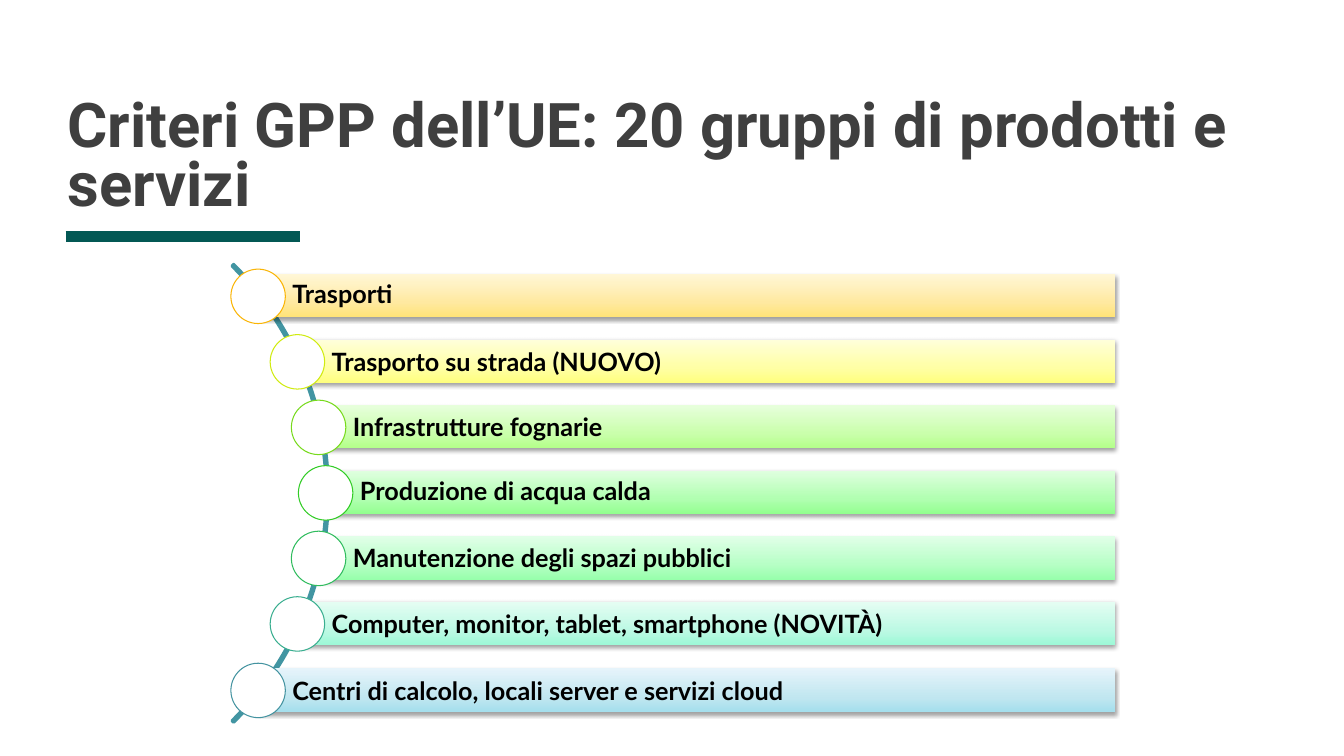
"""Build the slide on the EU green public procurement product groups."""
import math

import lxml.etree
import pptx
import pptx.dml.color
import pptx.enum.shapes
import pptx.enum.text
import pptx.oxml.ns
import pptx.util

PX = 9144
COLOURS = {
    "title": "3F3F3F",
    "rule": "035854",
    "arc": "4295A2",
    "text": "000000",
    "disc": "FFFFFF",
}
GROUPS = [
    ("Trasporti", 0.9, "FAB506", ("FFE376", "FFE9A1", "FFF7D7")),
    ("Trasporto su strada (NUOVO)", 1.0, "D0EB10", ("FFFF7E", "FFFFA5", "FFFFDA")),
    ("Infrastrutture fognarie", 1.0, "77DA1C", ("B3FF89", "CAFFAC", "E7FFDC")),
    ("Produzione di acqua calda", 0.9, "32CC26", ("92FF8F", "B1FFB1", "DFFFDF")),
    ("Manutenzione degli spazi pubblici", 1.0, "30BC5E", ("97FFAB", "B7FFC6", "E1FFE8")),
    ("Computer, monitor, tablet, smartphone (NOVITÀ)", 1.0, "39AE8F",
     ("9EF9D7", "BDF9E4", "E5FDF3")),
    ("Centri di calcolo, locali server e servizi cloud", 1.0, "4393A0",
     ("A6DFED", "C2E7F0", "E6F4FB")),
]
STOPS = (0, 35, 100)
FIRST_TOP, LAST_TOP, BAR_RIGHT, BAR_HEIGHT = 272, 663, 1106, 43
DISC = 54
CURVE_X, CURVE_RADIUS = 4, 319


def rgb(value):
    """Return a colour from a hex string."""
    return pptx.dml.color.RGBColor.from_string(value)


def add_element(parent, tag, **attributes):
    """Append a drawing element with the given attributes."""
    element = lxml.etree.SubElement(parent, pptx.oxml.ns.qn("a:" + tag))
    for name, value in attributes.items():
        element.set(name, str(value))
    return element


def add_colour(parent, value):
    """Append a colour element and return it."""
    return add_element(parent, "srgbClr", val=value)


def write_text(shape, text, font, size, colour, spacing, anchor, insets):
    """Write one bold left-aligned paragraph into a shape."""
    frame = shape.text_frame
    frame.word_wrap = True
    frame.vertical_anchor = anchor
    frame.margin_left, frame.margin_top, frame.margin_right, frame.margin_bottom = (
        inset * PX for inset in insets)
    frame.text = text
    para = frame.paragraphs[0]
    para.alignment = pptx.enum.text.PP_ALIGN.LEFT
    para.line_spacing = spacing
    span = para.runs[0]
    span.font.name = font
    span.font.size = pptx.util.Pt(size)
    span.font.bold = True
    span.font.color.rgb = rgb(colour)


def add_shape(page, kind, left, top, width, height):
    """Add a preset shape without its default shadow."""
    shape = page.shapes.add_shape(kind, left * PX, top * PX, width * PX, height * PX)
    shape.shadow.inherit = False
    return shape


def add_title(page, text):
    """Add the title, standing on the bottom of its box."""
    box = page.shapes.add_textbox(67 * PX, 45 * PX, 1200 * PX, 172 * PX)
    write_text(box, text, "Roboto", 44, COLOURS["title"], 0.8,
               pptx.enum.text.MSO_ANCHOR.BOTTOM, (0, 0, 0, 0))


def add_rule(page):
    """Add the thick line under the title."""
    rule = page.shapes.add_connector(
        pptx.enum.shapes.MSO_CONNECTOR.STRAIGHT, 65 * PX, 235 * PX, 298 * PX, 235 * PX)
    rule.line.color.rgb = rgb(COLOURS["rule"])
    rule.line.width = pptx.util.Pt(8)
    add_element(rule._element.spPr, "effectLst")


def add_arc(page):
    """Add the arc that links the discs."""
    arc = add_shape(page, pptx.enum.shapes.MSO_SHAPE.BLOCK_ARC, -317, 168, 643, 643)
    for index, value in enumerate((189, 27, 0.004)):
        arc.adjustments[index] = value
    arc.fill.background()
    arc.line.color.rgb = rgb(COLOURS["arc"])
    arc.line.width = pptx.util.Pt(2)


def fill_gradient(shape, shades):
    """Fill a shape with shades rising from its bottom edge."""
    shape.fill.gradient()
    shape.fill.gradient_angle = 90
    stops = shape._element.spPr.find(".//" + pptx.oxml.ns.qn("a:gsLst"))
    for stop in list(stops):
        stops.remove(stop)
    for position, shade in zip(STOPS, shades):
        add_colour(add_element(stops, "gs", pos=position * 1000), shade)


def add_shadow(shape):
    """Give a shape a soft shadow falling downwards."""
    effects = shape._element.spPr.find(pptx.oxml.ns.qn("a:effectLst"))
    shadow = add_element(effects, "outerShdw", blurRad=pptx.util.Pt(3.1),
                         dist=pptx.util.Pt(1.6), dir=5400000, rotWithShape=0)
    add_element(add_colour(shadow, COLOURS["text"]), "alpha", val=37000)


def add_bar(page, left, top, text, spacing, shades):
    """Add the labelled bar of one product group."""
    bar = add_shape(page, pptx.enum.shapes.MSO_SHAPE.RECTANGLE,
                    left, top, BAR_RIGHT - left, BAR_HEIGHT)
    fill_gradient(bar, shades)
    bar.line.fill.background()
    add_shadow(bar)
    write_text(bar, text, "Lato", 18, COLOURS["text"], spacing,
               pptx.enum.text.MSO_ANCHOR.MIDDLE, (34, 6, 6, 6))


def add_disc(page, left, top, outline):
    """Add the outlined disc at the head of a bar."""
    disc = add_shape(page, pptx.enum.shapes.MSO_SHAPE.OVAL, left, top, DISC, DISC)
    disc.fill.solid()
    disc.fill.fore_color.rgb = rgb(COLOURS["disc"])
    disc.line.color.rgb = rgb(outline)
    disc.line.width = pptx.util.Pt(0.75)


def add_groups(page):
    """Set the product groups at equal steps along the curve."""
    middle = (FIRST_TOP + LAST_TOP) / 2
    step = (LAST_TOP - FIRST_TOP) / (len(GROUPS) - 1)
    for index, (text, spacing, outline, shades) in enumerate(GROUPS):
        top = FIRST_TOP + index * step
        left = round(CURVE_X + math.sqrt(CURVE_RADIUS ** 2 - (top - middle) ** 2))
        top = int(top)
        add_bar(page, left, top, text, spacing, shades)
        add_disc(page, left - DISC // 2, top - 5, outline)


def main():
    """Build and save the deck."""
    deck = pptx.Presentation()
    deck.slide_width = 1333 * PX
    deck.slide_height = 750 * PX
    page = deck.slides.add_slide(deck.slide_layouts[6])
    add_rule(page)
    add_title(page, "Criteri GPP dell’UE: 20 gruppi di prodotti e servizi")
    add_arc(page)
    add_groups(page)
    deck.save("out.pptx")


if __name__ == "__main__":
    main()
